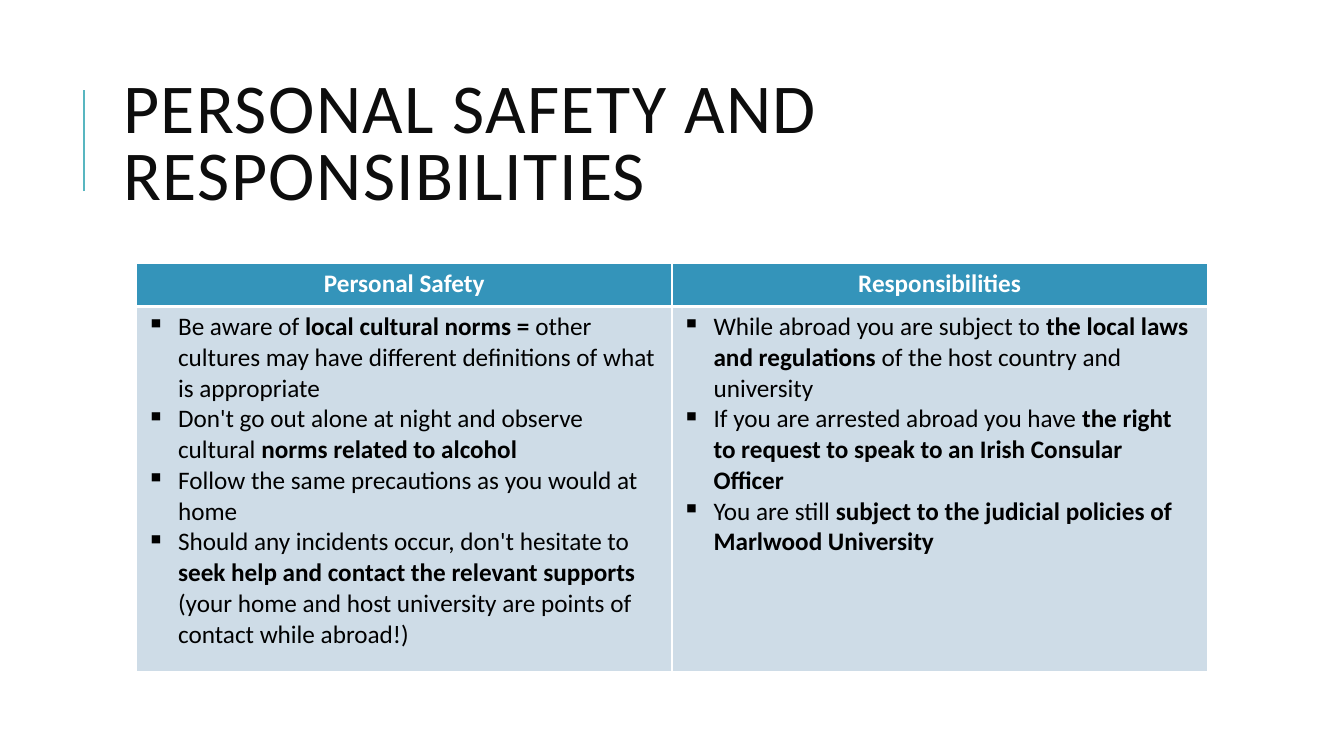
from lxml import etree
from pptx import Presentation
from pptx.dml.color import RGBColor
from pptx.enum.shapes import MSO_CONNECTOR
from pptx.enum.text import MSO_ANCHOR, MSO_AUTO_SIZE, PP_ALIGN
from pptx.oxml.ns import qn
from pptx.util import Pt

PX = 9525
STRAIGHT = MSO_CONNECTOR.STRAIGHT
MIDDLE, TOP = MSO_ANCHOR.MIDDLE, MSO_ANCHOR.TOP
LEFT, CENTER = PP_ALIGN.LEFT, PP_ALIGN.CENTER
NO_AUTOFIT = MSO_AUTO_SIZE.NONE

FONT = "Calibri"
WHITE, BLACK, TITLE_INK = "FFFFFF", "000000", "0D0D0D"
ACCENT, HEADER_FILL, BODY_FILL = "58B6C0", "3494BA", "CEDCE7"
BULLET_INDENT = 30
COLUMN_WIDTH, HEADER_HEIGHT, BODY_HEIGHT = 510, 41, 348

# Text between ** marks is bold.
TOPICS = {
    "Personal Safety": [
        "Be aware of **local cultural norms =** other cultures may have "
        "different definitions of what is appropriate",
        "Don't go out alone at night and observe cultural "
        "**norms related to alcohol**",
        "Follow the same precautions as you would at home",
        "Should any incidents occur, don't hesitate to "
        "**seek help and contact the relevant supports **"
        "(your home and host university are points of contact while abroad!)",
    ],
    "Responsibilities": [
        "While abroad you are subject to **the local laws and regulations** "
        "of the host country and university",
        "If you are arrested abroad you have **the right to request to speak "
        "to an Irish Consular Officer**",
        "You are still **subject to the judicial policies of "
        "Marlwood University**",
    ],
}


def px(length):
    return length * PX


def rgb(color):
    return RGBColor.from_string(color)


def add_bullet(paragraph):
    properties = paragraph._p.get_or_add_pPr()
    properties.set("marL", str(px(BULLET_INDENT)))
    properties.set("indent", str(-px(BULLET_INDENT)))
    etree.SubElement(properties, qn("a:buChar")).set("char", "▪")


def write_paragraph(paragraph, text, *, size, color, align=LEFT, bold=False,
                    bullet=False, line_spacing=None, tracking=None):
    """Write text in one paragraph; ** toggles bold, tracking is in points."""
    paragraph.alignment = align
    if line_spacing:
        paragraph.line_spacing = line_spacing
    if bullet:
        add_bullet(paragraph)
    for index, part in enumerate(text.split("**")):
        if not part:
            continue
        run = paragraph.add_run()
        run.text = part
        run.font.name = FONT
        run.font.size = Pt(size)
        run.font.bold = bold or index % 2 == 1
        run.font.color.rgb = rgb(color)
        if tracking:
            run._r.get_or_add_rPr().set("spc", str(tracking * 100))


def set_borders(cell, **widths):
    """Draw white borders; widths are points for L, R, T and B."""
    properties = cell._tc.get_or_add_tcPr()
    for side, width in widths.items():
        border = etree.SubElement(properties, qn(f"a:ln{side}"))
        border.set("w", str(Pt(width)))
        fill = etree.SubElement(border, qn("a:solidFill"))
        etree.SubElement(fill, qn("a:srgbClr")).set("val", WHITE)


def fill_cell(cell, paragraphs, fill, **text_format):
    cell.fill.solid()
    cell.fill.fore_color.rgb = rgb(fill)
    cell.vertical_anchor = TOP
    frame = cell.text_frame
    for index, text in enumerate(paragraphs):
        paragraph = frame.add_paragraph() if index else frame.paragraphs[0]
        write_paragraph(paragraph, text, **text_format)


def add_accent_line(slide, x, start_y, end_y):
    line = slide.shapes.add_connector(STRAIGHT, px(x), px(start_y), px(x), px(end_y))
    line.line.color.rgb = rgb(ACCENT)
    line.line.width = Pt(1.5)
    etree.SubElement(line._element.spPr, qn("a:effectLst"))


def set_title(slide, text):
    title = slide.shapes.title
    title.left, title.top, title.width, title.height = map(px, (108, 61, 1020, 157))
    frame = title.text_frame
    frame.word_wrap = True
    frame.auto_size = NO_AUTOFIT
    frame.vertical_anchor = MIDDLE
    write_paragraph(frame.paragraphs[0], text, size=50, color=TITLE_INK,
                    line_spacing=0.8, tracking=1)


def add_topic_table(slide, left, top):
    table = slide.shapes.add_table(
        2, len(TOPICS), px(left), px(top),
        px(COLUMN_WIDTH * len(TOPICS)), px(HEADER_HEIGHT + BODY_HEIGHT)).table
    table.rows[0].height = px(HEADER_HEIGHT)
    table.rows[1].height = px(BODY_HEIGHT)
    for column, (heading, advice) in enumerate(TOPICS.items()):
        table.columns[column].width = px(COLUMN_WIDTH)
        header, body = table.cell(0, column), table.cell(1, column)
        set_borders(header, L=1, R=1, T=1, B=3)
        set_borders(body, L=1, R=1, T=3, B=1)
        fill_cell(header, [heading], HEADER_FILL, size=18, color=WHITE,
                  align=CENTER, bold=True)
        fill_cell(body, advice, BODY_FILL, size=18, color=BLACK, bullet=True)


def main():
    presentation = Presentation()
    presentation.slide_width, presentation.slide_height = px(1280), px(720)
    slide = presentation.slides.add_slide(presentation.slide_layouts[5])
    add_accent_line(slide, 80, 182, 86)
    add_topic_table(slide, 130, 251)
    set_title(slide, "PERSONAL SAFETY AND RESPONSIBILITIES")
    presentation.save("out.pptx")


if __name__ == "__main__":
    main()
